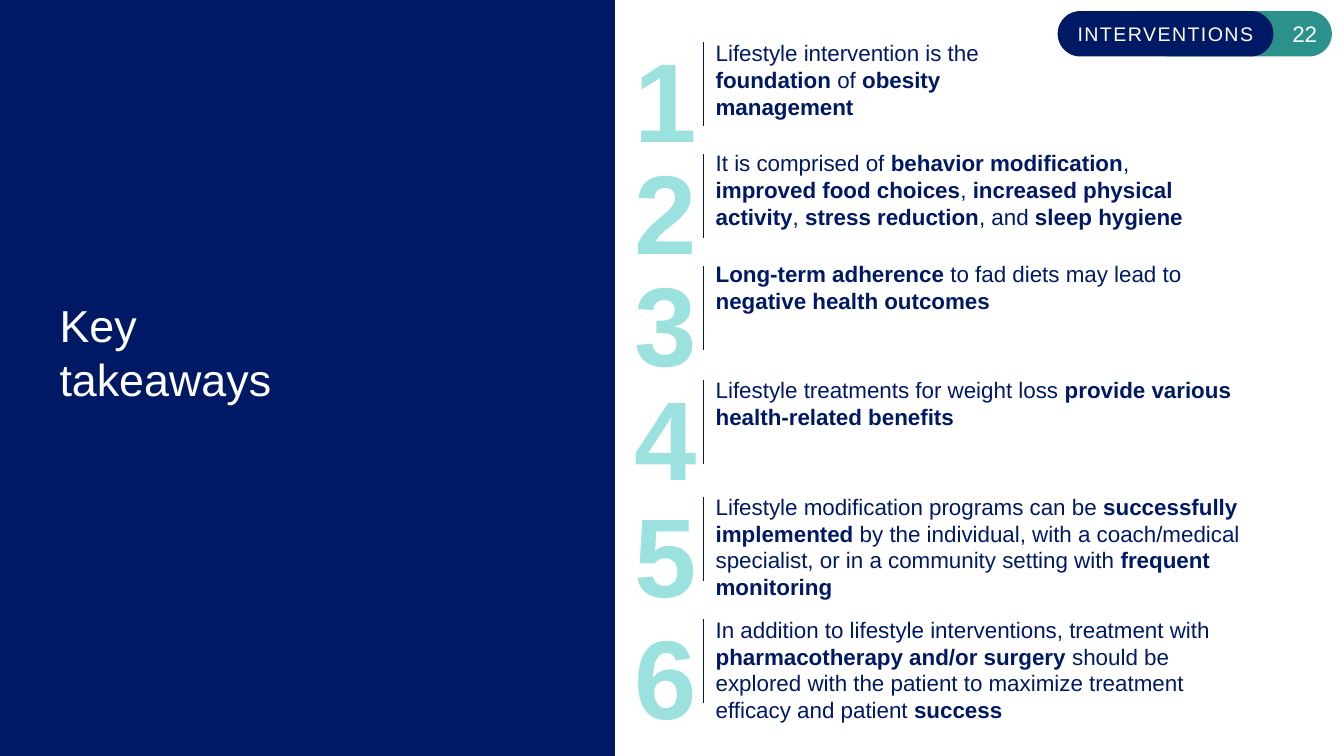
from dataclasses import dataclass

from lxml import etree
from pptx import Presentation, util as u
from pptx.dml.color import RGBColor
from pptx.enum import shapes, text
from pptx.oxml.ns import qn


@dataclass(frozen=True)
class Theme:
    font: str = "Arial"
    navy: str = "001965"
    teal: str = "2A918B"
    mint: str = "9BE2DE"
    white: str = "FFFFFF"
    title: int = 32
    number: int = 80
    body: int = 16
    tag: int = 14


THEME = Theme()
WIDTH, HEIGHT = 13.33, 7.5
PANEL_WIDTH = 6.1
LIST_LEFT = 6.29

# Row top, text top, text width, height, then (words, bold) runs
TAKEAWAYS = [
    (0.04, 0.34, 3.6, 0.91, [
        ("Lifestyle intervention is the ", False), ("foundation", True),
        (" of ", False), ("obesity management", True)]),
    (1.15, 1.43, 5.15, 0.91, [
        ("It is comprised of ", False), ("behavior modification", True),
        (", ", False), ("improved food choices", True),
        (", ", False), ("increased physical activity", True),
        (", ", False), ("stress reduction", True),
        (", and ", False), ("sleep hygiene", True)]),
    (2.26, 2.53, 5.56, 0.64, [
        ("Long-term adherence ", True), ("to fad diets may lead to ", False),
        ("negative health outcomes", True)]),
    (3.39, 3.68, 5.56, 0.64, [
        ("Lifestyle treatments for weight loss ", False),
        ("provide various health-related benefits", True)]),
    (4.55, 4.84, 6.24, 1.18, [
        ("Lifestyle modification programs can be ", False),
        ("successfully implemented", True),
        (" by the individual, with a coach/medical specialist, "
         "or in a community setting with ", False),
        ("frequent monitoring", True)]),
    (5.76, 6.06, 5.56, 1.18, [
        ("In addition to lifestyle interventions, treatment with ", False),
        ("pharmacotherapy and/or surgery ", True),
        ("should be explored with the patient to maximize treatment "
         "efficacy and patient ", False),
        ("success", True)]),
]


def inches(*lengths):
    return [u.Inches(length) for length in lengths]


def add_span(para, words, size, color, bold=False):
    span = para.add_run()
    span.text = words
    span.font.name = THEME.font
    span.font.size = u.Pt(size)
    span.font.bold = bold
    span.font.color.rgb = RGBColor.from_string(color)
    return span


def set_margins(frame, side, end):
    frame.margin_left = frame.margin_right = u.Inches(side)
    frame.margin_top = frame.margin_bottom = u.Inches(end)


def add_block(page, kind, box, color):
    block = page.shapes.add_shape(kind, *inches(*box))
    block.shadow.inherit = False
    block.fill.solid()
    block.fill.fore_color.rgb = RGBColor.from_string(color)
    block.line.fill.background()
    return block


def add_title_panel(page, left, top, width, height):
    add_block(page, shapes.MSO_SHAPE.RECTANGLE,
              (left, top, width, height), THEME.navy)
    title = page.shapes.title
    page.shapes.element.append(title.element)  # bring in front of the panel
    title.left, title.top, title.width, title.height = inches(
        left + 0.59, top + 0.45, 5.06, 6.08)
    frame = title.text_frame
    set_margins(frame, 0, 0)
    frame.word_wrap = True
    frame.auto_size = text.MSO_AUTO_SIZE.NONE
    frame.vertical_anchor = text.MSO_ANCHOR.MIDDLE
    para = frame.paragraphs[0]
    para.alignment = text.PP_ALIGN.LEFT
    para.line_spacing = 1.0
    add_span(para, "Key ", THEME.title, THEME.white)
    para.add_line_break()
    add_span(para, "takeaways", THEME.title, THEME.white)


def add_pill(page, box, color, words, size, align):
    pill = add_block(page, shapes.MSO_SHAPE.ROUNDED_RECTANGLE, box, color)
    pill.adjustments[0] = 0.5
    frame = pill.text_frame
    set_margins(frame, 0.08, 0.04)
    frame.vertical_anchor = text.MSO_ANCHOR.MIDDLE
    para = frame.paragraphs[0]
    para.alignment = align
    return add_span(para, words, size, THEME.white)


def add_section_tag(page, left, top, height):
    add_pill(page, (left + 0.89, top, 1.83, height), THEME.teal,
             "22", THEME.body, text.PP_ALIGN.RIGHT)
    label = add_pill(page, (left, top, 2.14, height), THEME.navy,
                     "INTERVENTIONS", THEME.tag, text.PP_ALIGN.CENTER)
    label.font._element.set("spc", "100")  # letter spacing of one point


def add_takeaway(page, number, left, top, text_top, width, height, runs):
    row = page.shapes.add_group_shape()

    # Large number
    box = row.shapes.add_textbox(*inches(left, top, 0.62, 1.47))
    frame = box.text_frame
    set_margins(frame, 0, 0)
    frame.word_wrap = False
    frame.auto_size = text.MSO_AUTO_SIZE.SHAPE_TO_FIT_TEXT
    para = frame.paragraphs[0]
    para.line_spacing = 1.2
    add_span(para, str(number), THEME.number, THEME.mint, True)

    # Takeaway text
    box = row.shapes.add_textbox(*inches(left + 0.71, text_top, width, height))
    frame = box.text_frame
    frame.word_wrap = True
    frame.auto_size = text.MSO_AUTO_SIZE.SHAPE_TO_FIT_TEXT
    for words, bold in runs:
        add_span(frame.paragraphs[0], words, THEME.body, THEME.navy, bold)

    # Divider
    x, y = left + 0.69, top + 0.38
    divider = row.shapes.add_connector(
        shapes.MSO_CONNECTOR.STRAIGHT, *inches(x, y, x, y + 0.83))
    divider.line.color.rgb = RGBColor.from_string(THEME.navy)
    divider.line.width = u.Pt(1)
    etree.SubElement(divider.element.spPr, qn("a:effectLst"))


def main():
    deck = Presentation()
    deck.slide_width, deck.slide_height = inches(WIDTH, HEIGHT)
    page = deck.slides.add_slide(deck.slide_layouts[5])
    add_title_panel(page, 0, 0, PANEL_WIDTH, HEIGHT)
    add_section_tag(page, 10.49, 0.11, 0.45)
    for number, takeaway in enumerate(TAKEAWAYS, 1):
        add_takeaway(page, number, LIST_LEFT, *takeaway)
    deck.save("out.pptx")


if __name__ == "__main__":
    main()
